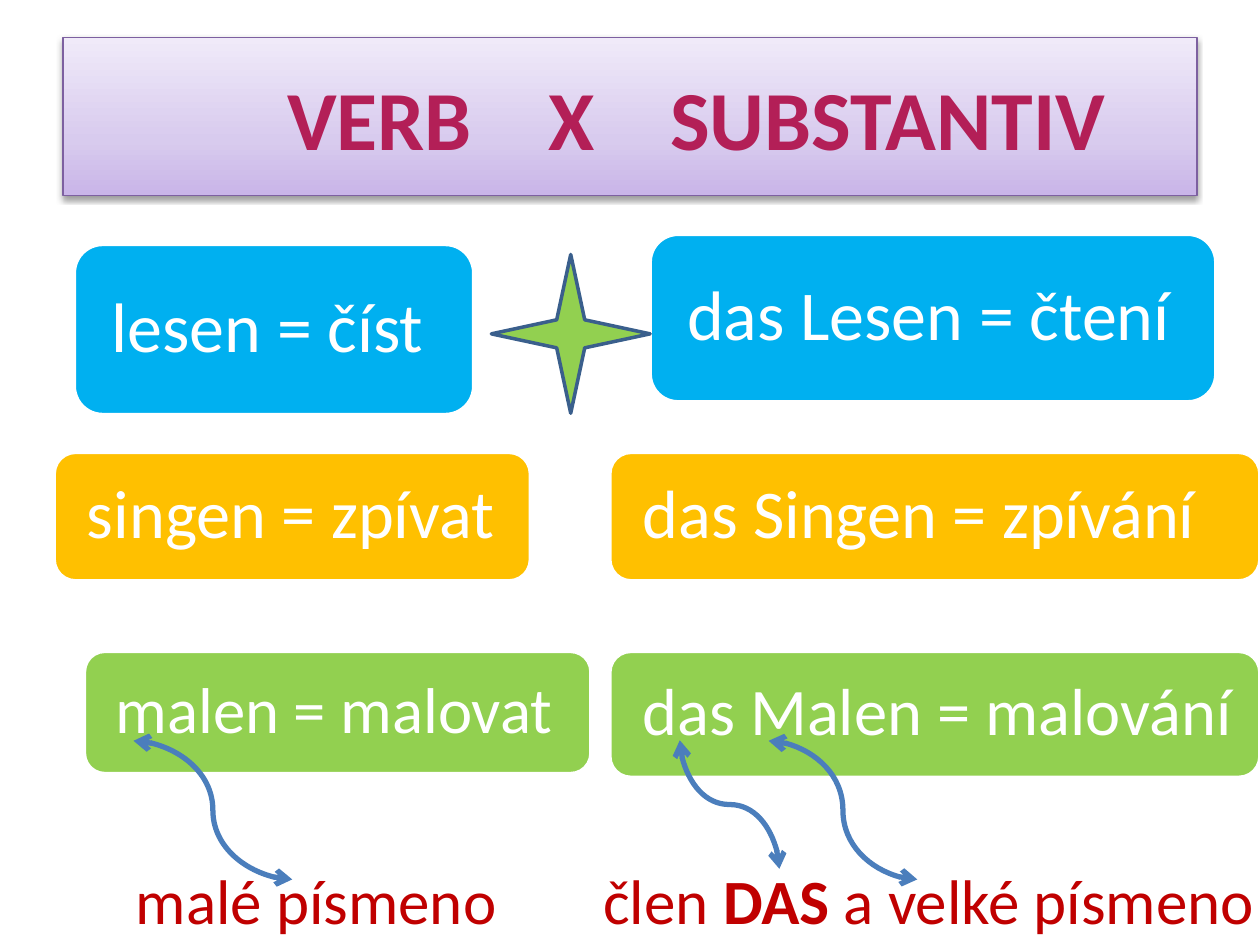
from dataclasses import dataclass
from typing import NamedTuple

from lxml import etree
from pptx import Presentation, util as u
from pptx.dml.color import RGBColor
from pptx.enum import shapes, text
from pptx.oxml.ns import qn


@dataclass(frozen=True)
class Theme:
    font: str = "Calibri"
    white: str = "FFFFFF"
    blue: str = "00B0F0"
    amber: str = "FFC000"
    green: str = "92D050"
    star_line: str = "3A5F8C"
    arrow: str = "4B7EBC"
    note: str = "C00000"
    title: str = "B31F57"
    title_line: str = "7D60A0"
    title_stops: tuple = ((0, "C9B5E8"), (35, "D8CBEE"), (100, "F0EAF9"))
    title_size: int = 48
    note_size: int = 36


class Area(NamedTuple):
    """Left, top, width and height in grid columns and rows."""
    left: float
    top: float
    width: float
    height: float


class Card(NamedTuple):
    words: str
    area: Area
    color: str
    size: int
    inset: float


class Arrow(NamedTuple):
    start: tuple
    end: tuple
    rotation: int = 0


class Note(NamedTuple):
    spans: tuple
    area: Area


THEME = Theme()
WIDTH, HEIGHT = u.Inches(10), u.Inches(7.5)
COLUMN, ROW = WIDTH / 100, HEIGHT / 75

CARDS = (
    Card("lesen = číst", Area(5.9, 19.4, 31.7, 13.5), THEME.blue, 40, 2.3),
    Card("das Lesen = čtení", Area(51.6, 18.6, 44.9, 13.3), THEME.blue, 40, 2.3),
    Card("singen = zpívat", Area(4.3, 35.9, 37.8, 10.2), THEME.amber, 39, 2.1),
    Card("das Singen = zpívání", Area(48.4, 35.9, 51.6, 10.2), THEME.amber, 39, 2.1),
    Card("malen = malovat", Area(6.7, 51.7, 40.2, 9.7), THEME.green, 37, 2),
    Card("das Malen = malování", Area(48.4, 51.7, 51.6, 10), THEME.green, 38, 2.1),
)
ARROWS = (
    Arrow((10.6, 58.8), (23.2, 69.8)),
    Arrow((63, 59.9), (52.8, 67.8), rotation=270),
    Arrow((61, 58.8), (72.8, 69.8)),
)
NOTES = (
    Note((("malé písmeno", False),), Area(9.8, 67.9, 35.4, 7.1)),
    Note((("člen ", False), ("DAS ", True), ("a velké písmeno", False)),
         Area(46.9, 67.9, 55.1, 7.1)),
)
TITLE_AREA = Area(5, 3, 90, 12.5)
TITLE_INSET = 17.8
TITLE_TABS = (20.7, 30.4)
STAR_AREA = Area(39, 20.2, 12.6, 12.6)


def cols(count: float) -> int:
    return round(count * COLUMN)


def rows(count: float) -> int:
    return round(count * ROW)


def place(area: Area) -> tuple:
    return cols(area.left), rows(area.top), cols(area.width), rows(area.height)


def style(font, size: float, color: str, bold: bool = False) -> None:
    font.name, font.size, font.bold = THEME.font, u.Pt(size), bold
    font.color.rgb = RGBColor.from_string(color)


def add_shape(page, kind, area: Area, line: str, weight: float, fill: str = ""):
    shape = page.shapes.add_shape(kind, *place(area))
    shape.line.color.rgb = RGBColor.from_string(line)
    shape.line.width = u.Pt(weight)
    shape.shadow.inherit = False
    if fill:
        shape.fill.solid()
        shape.fill.fore_color.rgb = RGBColor.from_string(fill)
    return shape


def write_line(shape, words: str, inset: float):
    """Put one left-aligned, vertically centred paragraph into a shape."""
    frame = shape.text_frame
    frame.text = words
    frame.word_wrap = True
    frame.vertical_anchor = text.MSO_ANCHOR.MIDDLE
    frame.margin_left = cols(inset)
    para = frame.paragraphs[0]
    para.alignment = text.PP_ALIGN.LEFT
    return para


def add_title(page) -> None:
    box = add_shape(page, shapes.MSO_SHAPE.RECTANGLE, TITLE_AREA, THEME.title_line, 0.75)
    box.fill.gradient()
    box.fill.gradient_angle = 90
    stops = box._element.spPr.find(".//" + qn("a:gsLst"))
    for stop in list(stops):
        stops.remove(stop)
    for share, color in THEME.title_stops:
        stop = etree.SubElement(stops, qn("a:gs"), pos=str(share * 1000))
        etree.SubElement(stop, qn("a:srgbClr"), val=color)

    effects = box._element.spPr.find(qn("a:effectLst"))
    shadow = etree.SubElement(effects, qn("a:outerShdw"), blurRad=str(u.Pt(3.1)),
                              dist=str(u.Pt(1.6)), dir="5400000", rotWithShape="0")
    black = etree.SubElement(shadow, qn("a:srgbClr"), val="000000")
    etree.SubElement(black, qn("a:alpha"), val="38000")

    para = write_line(box, "VERB\tX\tSUBSTANTIV", TITLE_INSET)
    tabs = etree.SubElement(para._p.get_or_add_pPr(), qn("a:tabLst"))
    for stop in TITLE_TABS:
        etree.SubElement(tabs, qn("a:tab"), pos=str(cols(stop)), algn="l")
    style(para.runs[0].font, THEME.title_size, THEME.title, bold=True)


def add_card(page, card: Card) -> None:
    box = add_shape(page, shapes.MSO_SHAPE.ROUNDED_RECTANGLE, card.area,
                    THEME.white, 2, card.color)
    para = write_line(box, card.words, card.inset)
    para.line_spacing = 0.9
    style(para.runs[0].font, card.size, THEME.white)


def add_arrow(page, arrow: Arrow) -> None:
    (x1, y1), (x2, y2) = arrow.start, arrow.end
    curve = page.shapes.add_connector(shapes.MSO_CONNECTOR.CURVE,
                                      cols(x1), rows(y1), cols(x2), rows(y2))
    curve.line.color.rgb = RGBColor.from_string(THEME.arrow)
    curve.line.width = u.Pt(3)
    for end in ("a:headEnd", "a:tailEnd"):
        etree.SubElement(curve.line._get_or_add_ln(), qn(end), type="arrow")
    properties = curve._element.spPr
    etree.SubElement(properties, qn("a:effectLst"))
    if arrow.rotation:
        properties.find(qn("a:xfrm")).set("rot", str(arrow.rotation * 60000))


def add_note(page, note: Note) -> None:
    frame = page.shapes.add_textbox(*place(note.area)).text_frame
    frame.word_wrap = True
    frame.auto_size = text.MSO_AUTO_SIZE.SHAPE_TO_FIT_TEXT
    for words, bold in note.spans:
        span = frame.paragraphs[0].add_run()
        span.text = words
        style(span.font, THEME.note_size, THEME.note, bold)


def main() -> None:
    deck = Presentation()
    deck.slide_width, deck.slide_height = WIDTH, HEIGHT
    page = deck.slides.add_slide(deck.slide_layouts[6])
    add_title(page)
    for card in CARDS:
        add_card(page, card)
    add_shape(page, shapes.MSO_SHAPE.STAR_4_POINT, STAR_AREA, THEME.star_line, 2, THEME.green)
    for arrow in ARROWS:
        add_arrow(page, arrow)
    for note in NOTES:
        add_note(page, note)
    deck.save("out.pptx")


if __name__ == "__main__":
    main()
